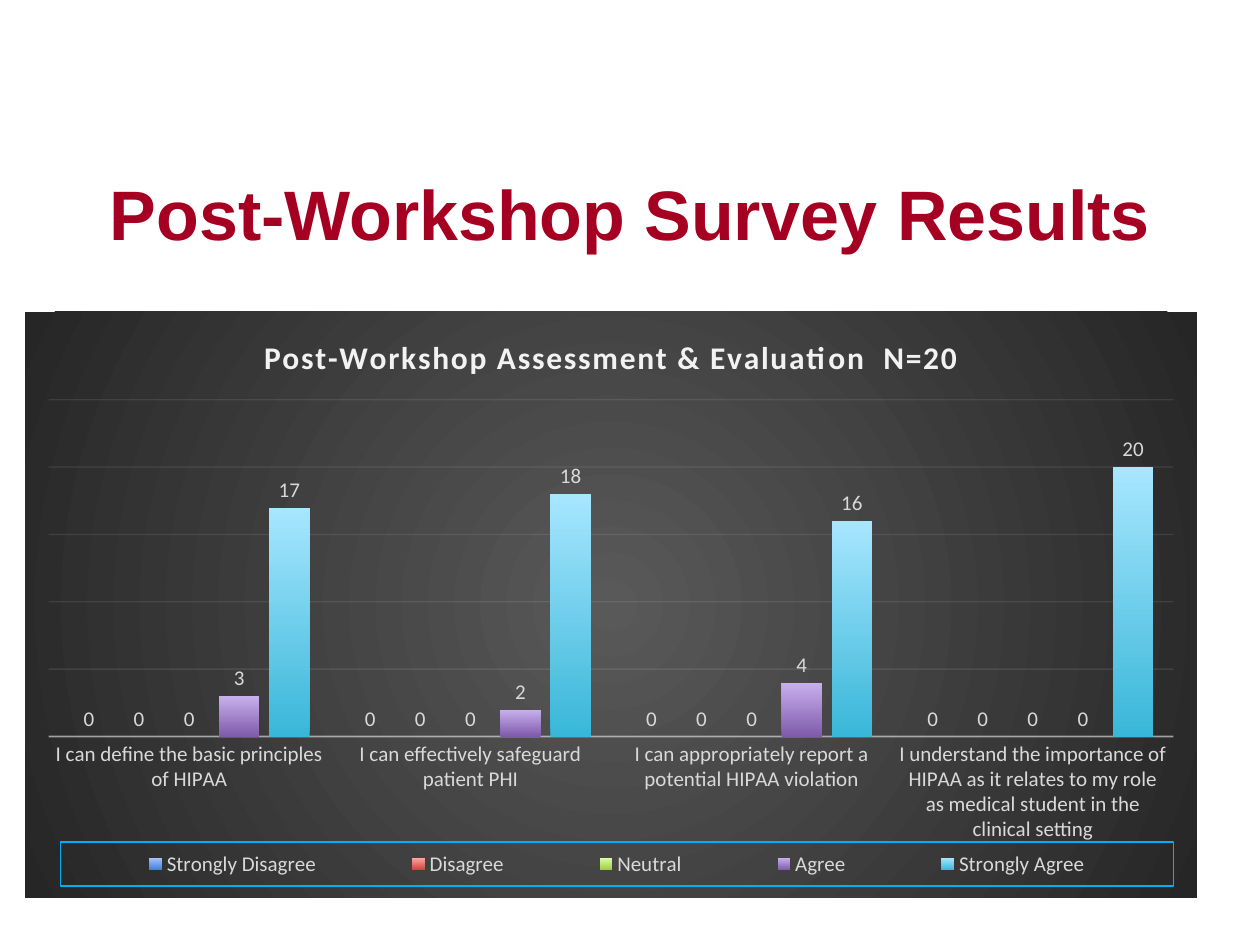
from lxml import etree
from pptx import Presentation
from pptx.chart.data import CategoryChartData
from pptx.dml.color import RGBColor
from pptx.enum.chart import XL_CHART_TYPE, XL_LABEL_POSITION, XL_LEGEND_POSITION, XL_TICK_MARK
from pptx.enum.text import MSO_ANCHOR, PP_ALIGN
from pptx.oxml import parse_xml
from pptx.oxml.ns import nsdecls, qn
from pptx.util import Inches, Pt

COLUMN = XL_CHART_TYPE.COLUMN_CLUSTERED
OUTSIDE = XL_LABEL_POSITION.OUTSIDE_END
BOTTOM = XL_LEGEND_POSITION.BOTTOM
NONE = XL_TICK_MARK.NONE
MIDDLE = MSO_ANCHOR.MIDDLE
CENTER = PP_ALIGN.CENTER

TITLE = "Post-Workshop Survey Results"
HEAD = "Post-Workshop Assessment & Evaluation  N=20"
ITEMS = [
    "I can define the basic principles of HIPAA",
    "I can effectively safeguard patient PHI",
    "I can appropriately report a potential HIPAA violation",
    "I understand the importance of HIPAA as it relates to my role "
    "as medical student in the clinical setting",
]
SERIES = [
    ("Strongly Disagree", (0, 0, 0, 0), ("3F80CE", "A4C4FF")),
    ("Disagree", (0, 0, 0, 0), ("D1403C", "FFA6A5")),
    ("Neutral", (0, 0, 0, 0), ("A0CA4A", "DAFFA5")),
    ("Agree", (3, 2, 4, 0), ("7F5BAB", "C8B0ED")),
    ("Strongly Agree", (17, 18, 16, 20), ("39B7D8", "A7E6FF")),
]
THEME = {
    "title": ("Arial", 40, "A50021", True),
    "head": ("Calibri", 18, "F2F2F2", True),
    "text": ("Calibri", 12, "D9D9D9", False),
    "rule": "F2F2F2",
    "frame": "00B0F0",
    "back": ("595959", "262626"),
}
WIDE, HIGH = 10, 7.5
TITLE_BOX = (0.05, 0.14, 0.9, 0.17)
CHART_BOX = (0.02, 0.33, 0.93, 0.62)
PLOT = (0.02, 0.15, 0.96, 0.575)
KEY = (0.03, 0.905, 0.95, 0.075)


def place(box):
    return [Inches(s * d) for s, d in zip(box, (WIDE, HIGH, WIDE, HIGH))]


def style(font, name):
    face, size, color, bold = THEME[name]
    font.name, font.size, font.bold = face, Pt(size), bold
    font.color.rgb = RGBColor.from_string(color)


def rule(line, width, alpha):
    line.width = Pt(width)
    line.color.rgb = RGBColor.from_string(THEME["rule"])
    tint = next(line._ln.iter(qn("a:srgbClr")))
    etree.SubElement(tint, qn("a:alpha")).set("val", str(alpha * 1000))


def layout(box, inner=False):
    target = '<c:layoutTarget val="inner"/>' if inner else ""
    modes = "".join(f'<c:{k}Mode val="edge"/>' for k in "xy")
    sizes = "".join(f'<c:{k} val="{v}"/>' for k, v in zip("xywh", box))
    return parse_xml(f'<c:layout {nsdecls("c")}><c:manualLayout>{target}{modes}'
                     f'{sizes}</c:manualLayout></c:layout>')


def strip(node, tag):
    for old in node.findall(qn(tag)):
        node.remove(old)


def paint(chart):
    stops = "".join(f'<a:gs pos="{i * 100000}"><a:srgbClr val="{c}"/></a:gs>'
                    for i, c in enumerate(THEME["back"]))
    root = chart._chartSpace
    root.find(qn("c:chart")).addnext(parse_xml(
        f'<c:spPr {nsdecls("c", "a")}><a:gradFill><a:gsLst>{stops}</a:gsLst>'
        '<a:path path="circle"><a:fillToRect l="50000" t="50000" r="50000" b="50000"/>'
        '</a:path></a:gradFill><a:ln><a:noFill/></a:ln></c:spPr>'))
    area = next(root.iter(qn("c:plotArea")))
    strip(area, "c:layout")
    area.insert(0, layout(PLOT, True))


def add_key(chart):
    chart.has_legend = True
    key = chart.legend
    key.position = BOTTOM
    key.include_in_layout = False
    style(key.font, "text")
    node = key._element
    strip(node, "c:layout")
    node.find(qn("c:legendPos")).addnext(layout(KEY))
    node.find(qn("c:overlay")).addnext(parse_xml(
        f'<c:spPr {nsdecls("c", "a")}><a:noFill/><a:ln w="9525"><a:solidFill>'
        f'<a:srgbClr val="{THEME["frame"]}"/></a:solidFill></a:ln></c:spPr>'))


def add_title(slide):
    frame = slide.shapes.add_textbox(*place(TITLE_BOX)).text_frame
    frame.word_wrap = True
    frame.vertical_anchor = MIDDLE
    para = frame.paragraphs[0]
    para.text, para.alignment = TITLE, CENTER
    style(para.font, "title")


def add_chart(slide):
    data = CategoryChartData()
    data.categories = ITEMS
    for name, vals, _ in SERIES:
        data.add_series(name, vals)
    chart = slide.shapes.add_chart(COLUMN, *place(CHART_BOX), data).chart
    style(chart.font, "text")

    chart.has_title = True
    para = chart.chart_title.text_frame.paragraphs[0]
    para.text = HEAD
    style(para.font, "head")
    para.font._element.set("spc", "100")

    plot = chart.plots[0]
    plot.gap_width, plot.overlap, plot.vary_by_categories = 100, -24, False
    for bars, (_, _, colors) in zip(plot.series, SERIES):
        fill = bars.format.fill
        fill.gradient()
        fill.gradient_angle = 90
        for stop, color in zip(fill.gradient_stops, colors):
            stop.color.rgb = RGBColor.from_string(color)
        tags = bars.data_labels
        tags.show_value, tags.position = True, OUTSIDE
        style(tags.font, "text")

    cats, vals = chart.category_axis, chart.value_axis
    cats.major_tick_mark = cats.minor_tick_mark = NONE
    style(cats.tick_labels.font, "text")
    rule(cats.format.line, 1, 54)
    vals.visible = False
    vals.minimum_scale, vals.maximum_scale, vals.major_unit = 0, 25, 5
    rule(vals.major_gridlines.format.line, 0.75, 10)
    add_key(chart)
    paint(chart)


def main():
    deck = Presentation()
    deck.slide_width, deck.slide_height = Inches(WIDE), Inches(HIGH)
    slide = deck.slides.add_slide(deck.slide_layouts[6])
    add_title(slide)
    add_chart(slide)
    deck.save("out.pptx")


if __name__ == "__main__":
    main()
